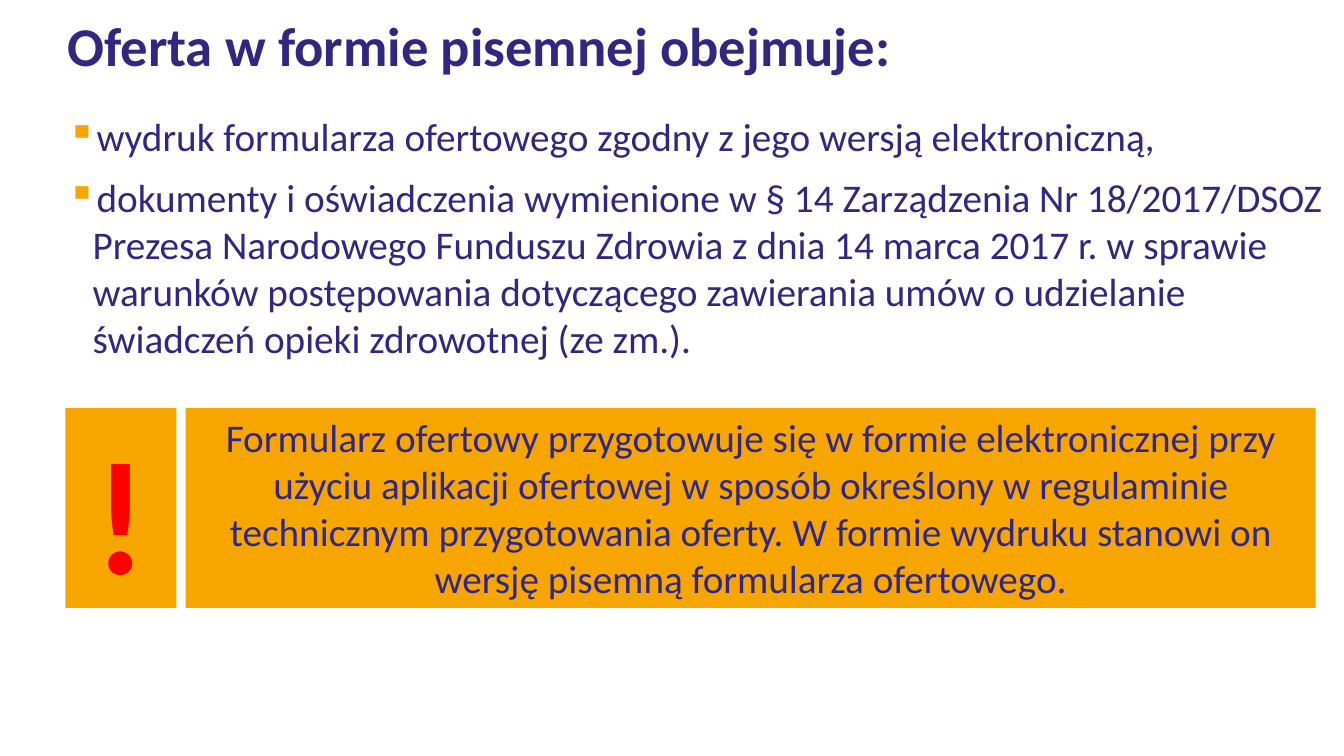
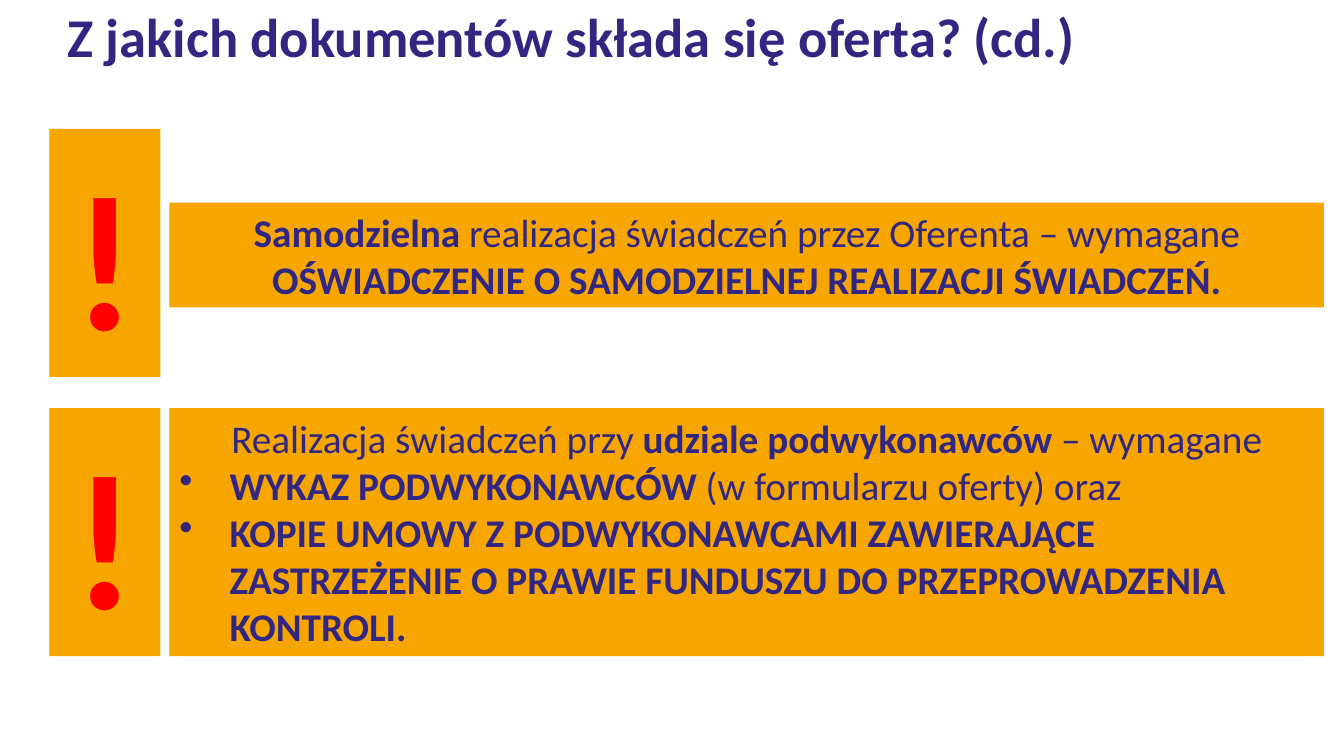
from dataclasses import dataclass

from lxml.etree import SubElement
from pptx import Presentation
from pptx.dml.color import RGBColor
from pptx.enum.shapes import MSO_SHAPE
from pptx.enum.text import MSO_ANCHOR, PP_ALIGN
from pptx.oxml.ns import qn
from pptx.slide import Slide
from pptx.text.text import TextFrame
from pptx.util import Inches, Pt


@dataclass(frozen=True)
class Theme:
    font: str = "Calibri"
    navy: str = "312783"
    orange: str = "F7A600"
    red: str = "FF0000"
    title_size: int = 39
    body_size: int = 28


@dataclass(frozen=True)
class Box:
    left: float
    top: float
    width: float
    height: float


@dataclass(frozen=True)
class Para:
    text: str
    align: PP_ALIGN = PP_ALIGN.LEFT
    bullet: str = ""
    bullet_color: str = ""
    indent: float = 0
    spacing: float = 1
    before: float = 0


@dataclass(frozen=True)
class Callout:
    mark: Box
    panel: Box
    mark_size: int
    anchor: MSO_ANCHOR
    paras: tuple[Para, ...]


THEME = Theme()
MARK_WIDTH = 1.1


def add_bullet(p, para: Para) -> None:
    pPr = p._p.get_or_add_pPr()
    pPr.set("marL", str(Inches(para.indent)))
    pPr.set("indent", str(-Inches(para.indent)))
    if para.bullet_color:
        color = SubElement(pPr, qn("a:buClr"))
        SubElement(color, qn("a:srgbClr")).set("val", para.bullet_color)
    SubElement(pPr, qn("a:buChar")).set("char", para.bullet)


def write_text(tf: TextFrame, paras: tuple[Para, ...], *, size: int = THEME.body_size,
               color: str = THEME.navy, bold: bool = False,
               anchor: MSO_ANCHOR = MSO_ANCHOR.MIDDLE) -> None:
    tf.word_wrap = True
    tf.vertical_anchor = anchor
    for i, para in enumerate(paras):
        p = tf.add_paragraph() if i else tf.paragraphs[0]
        if para.bullet:
            add_bullet(p, para)
        p.alignment = para.align
        p.line_spacing = para.spacing
        p.space_before = Pt(para.before)
        for j, part in enumerate(para.text.split("**")):
            if not part:
                continue
            r = p.add_run()
            r.text = part
            r.font.name = THEME.font
            r.font.size = Pt(size)
            r.font.bold = bold or j % 2 == 1
            r.font.color.rgb = RGBColor.from_string(color)


def place(box: Box) -> tuple[Inches, ...]:
    return tuple(Inches(v) for v in (box.left, box.top, box.width, box.height))


def add_textbox(s: Slide, box: Box, *paras: Para, **fmt) -> None:
    write_text(s.shapes.add_textbox(*place(box)).text_frame, paras, **fmt)


def add_panel(s: Slide, box: Box, *paras: Para, **fmt) -> None:
    sp = s.shapes.add_shape(MSO_SHAPE.RECTANGLE, *place(box))
    sp.shadow.inherit = False
    sp.fill.solid()
    sp.fill.fore_color.rgb = RGBColor.from_string(THEME.orange)
    sp.line.fill.background()
    write_text(sp.text_frame, paras, **fmt)


def add_callout(s: Slide, callout: Callout) -> None:
    add_panel(s, callout.panel, *callout.paras, anchor=callout.anchor)
    add_panel(s, callout.mark, Para("!", PP_ALIGN.CENTER), size=callout.mark_size,
              color=THEME.red, bold=True, anchor=callout.anchor)


def add_slide(prs: Presentation, title: str, title_height: float,
              callouts: tuple[Callout, ...]) -> Slide:
    s = prs.slides.add_slide(prs.slide_layouts[6])
    add_textbox(s, Box(0.57, 0, 11.5, title_height), Para(title, spacing=0.9),
                size=THEME.title_size, bold=True)
    for callout in callouts:
        add_callout(s, callout)
    return s


def offer_item(text: str, **fmt) -> Para:
    return Para(text, bullet="▪", bullet_color=THEME.orange, indent=0.25, **fmt)


def document_item(text: str) -> Para:
    return Para(text, bullet="•", indent=0.5)


FORM_CALLOUT = Callout(
    Box(0.65, 4.05, MARK_WIDTH, 1.98), Box(1.84, 4.05, 11.21, 1.98), 115, MSO_ANCHOR.TOP,
    (Para("Formularz ofertowy przygotowuje się w formie elektronicznej przy użyciu "
          "aplikacji ofertowej w sposób określony w regulaminie technicznym "
          "przygotowania oferty. W formie wydruku stanowi on wersję pisemną "
          "formularza ofertowego.", PP_ALIGN.CENTER),))

DOCUMENT_CALLOUTS = (
    Callout(
        Box(0.49, 1.28, MARK_WIDTH, 2.46), Box(1.68, 2.01, 11.45, 1.04), 138,
        MSO_ANCHOR.MIDDLE,
        (Para("**Samodzielna** realizacja świadczeń przez Oferenta – wymagane "
              "**OŚWIADCZENIE O SAMODZIELNEJ REALIZACJI ŚWIADCZEŃ.**", PP_ALIGN.CENTER),)),
    Callout(
        Box(0.49, 4.05, MARK_WIDTH, 2.46), Box(1.68, 4.05, 11.45, 2.46), 138,
        MSO_ANCHOR.MIDDLE,
        (Para("Realizacja świadczeń przy** udziale podwykonawców **– wymagane",
              PP_ALIGN.CENTER),
         document_item("**WYKAZ PODWYKONAWCÓW **(w formularzu oferty) oraz"),
         document_item("**KOPIE UMOWY Z PODWYKONAWCAMI ZAWIERAJĄCE ZASTRZEŻENIE "
                       "O PRAWIE FUNDUSZU DO PRZEPROWADZENIA KONTROLI.**"))),
)


def main() -> None:
    prs = Presentation()
    prs.slide_width, prs.slide_height = Inches(13.33), Inches(7.5)
    s = add_slide(prs, "Oferta w formie pisemnej obejmuje:", 0.97, (FORM_CALLOUT,))
    add_textbox(
        s, Box(0.57, 0.28, 12.64, 3.91),
        offer_item("wydruk formularza ofertowego zgodny z jego wersją elektroniczną,",
                   spacing=1.5),
        offer_item("dokumenty i oświadczenia wymienione w § 14 Zarządzenia Nr "
                   "18/2017/DSOZ Prezesa Narodowego Funduszu Zdrowia z dnia 14 marca "
                   "2017 r. w sprawie warunków postępowania dotyczącego zawierania umów "
                   "o udzielanie świadczeń opieki zdrowotnej (ze zm.).", before=10))
    add_slide(prs, "Z jakich dokumentów składa się oferta? (cd.)", 0.78, DOCUMENT_CALLOUTS)
    prs.save("out.pptx")


if __name__ == "__main__":
    main()
